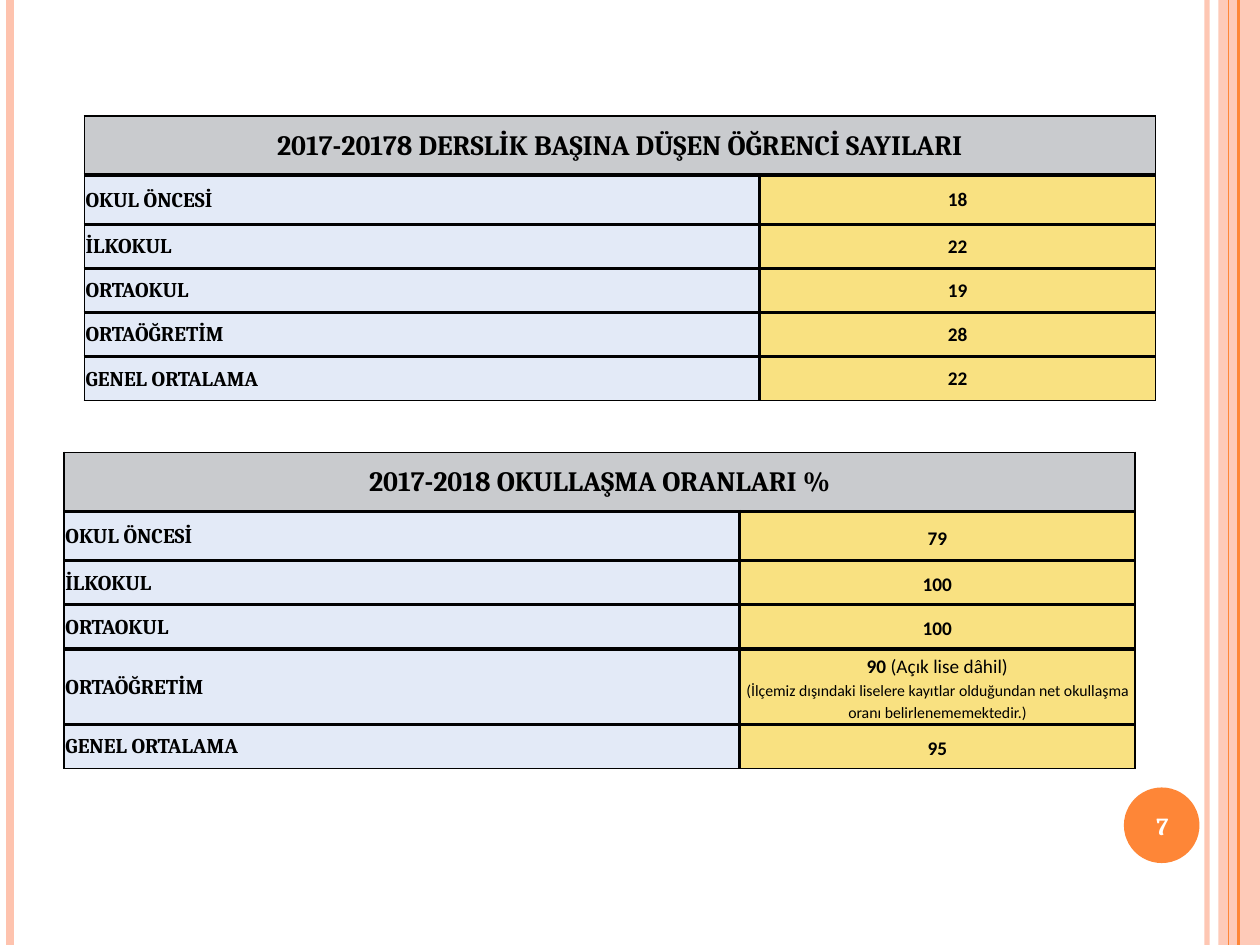
from lxml import etree
from pptx import Presentation
from pptx.dml.color import RGBColor
from pptx.enum.shapes import MSO_CONNECTOR, MSO_SHAPE
from pptx.enum.text import MSO_ANCHOR as ANCHOR, PP_ALIGN as ALIGN
from pptx.oxml.ns import qn
from pptx.util import Inches, Pt

COLORS = {"peach": "FEC3AE", "orange": "FE8637", "white": "FFFFFF", "black": "000000",
          "header": "C9CBCE", "label": "E3EAF7", "value": "F9E181"}


def add_text(p, text, size, font, bold=True, color="black"):
    r = p.add_run()
    r.text = text
    for name, value in {"size": Pt(size), "name": font, "bold": bold}.items():
        setattr(r.font, name, value)
    r.font.color.rgb = RGBColor.from_string(COLORS[color])


def format_cell(cell, color, paragraphs, align, spacing, borders):
    margins = {"margin_left": Inches(0.01), "margin_right": Inches(0.01),
               "margin_top": Inches(0.01), "margin_bottom": 0}
    for name, value in {**margins, "vertical_anchor": ANCHOR.MIDDLE}.items():
        setattr(cell, name, value)
    cell.fill.solid()
    cell.fill.fore_color.rgb = RGBColor.from_string(COLORS[color])
    for i, (side, width) in enumerate(zip("LRTB", borders)):
        ln = etree.Element(qn(f"a:ln{side}"), w=str(Pt(width)))
        fill = etree.SubElement(ln, qn("a:solidFill"))
        etree.SubElement(fill, qn("a:srgbClr"), val=COLORS["black"])
        cell._tc.get_or_add_tcPr().insert(i, ln)
    tf = cell.text_frame
    for i, runs in enumerate(paragraphs):
        p = tf.add_paragraph() if i else tf.paragraphs[0]
        p.alignment = align
        p.line_spacing = spacing
        for run in runs:
            add_text(p, *run)


prs = Presentation()
prs.slide_width, prs.slide_height = Inches(10), Inches(7.5)
s = prs.slides.add_slide(prs.slide_layouts[6])

rules = [(9.58, "peach", 3, 93), (0.08, "peach", 4.5, 100),
         (9.83, "orange", 1.5, 100), (9.75, "orange", 0.75, 100)]
bars = [(MSO_SHAPE.RECTANGLE, (9.67, 0, 0.33, 7.5), "peach", 87),
        (MSO_SHAPE.OVAL, (8.92, 6.25, 0.6, 0.6), "orange", 100)]

for kind, box, color, alpha in bars:
    sp = s.shapes.add_shape(kind, *map(Inches, box))
    sp.shadow.inherit = False
    sp.fill.solid()
    sp.fill.fore_color.rgb = RGBColor.from_string(COLORS[color])
    sp.line.fill.background()
    clr = sp._element.spPr.find(f".//{qn('a:srgbClr')}")
    etree.SubElement(clr, qn("a:alpha"), val=str(alpha * 1000))

for x, color, width, alpha in rules:
    line = s.shapes.add_connector(MSO_CONNECTOR.STRAIGHT, Inches(x), 0, Inches(x), Inches(7.5))
    line.line.color.rgb = RGBColor.from_string(COLORS[color])
    line.line.width = Pt(width)
    clr = line._element.spPr.find(f".//{qn('a:srgbClr')}")
    etree.SubElement(clr, qn("a:alpha"), val=str(alpha * 1000))
    etree.SubElement(line._element.spPr, qn("a:effectLst"))

number = s.shapes.add_textbox(*map(Inches, (8.89, 6.27, 0.67, 0.57)))
tf = number.text_frame
tf.word_wrap = True
tf.vertical_anchor = ANCHOR.MIDDLE
tf.paragraphs[0].alignment = ALIGN.CENTER
add_text(tf.paragraphs[0], "7", 14, "Cambria", True, "white")

labels = ["OKUL ÖNCESİ", "İLKOKUL", "ORTAOKUL", "ORTAÖĞRETİM", "GENEL ORTALAMA"]
secondary_note = "(İlçemiz dışındaki liselere kayıtlar olduğundan net okullaşma oranı belirlenememektedir.)"
tables = [
    {"title": "2017-20178 DERSLİK BAŞINA DÜŞEN ÖĞRENCİ SAYILARI", "at": (0.67, 0.92, 8.5, 2.27),
     "rows": [0.47, 0.39, 0.35, 0.35, 0.35, 0.35], "spacing": 1.0,
     "values": ["18", "22", "19", "28", "22"], "extra": {}},
    {"title": "2017-2018 OKULLAŞMA ORANLARI %", "at": (0.51, 3.59, 8.5, 2.53),
     "rows": [0.47, 0.39, 0.35, 0.35, 0.6, 0.35], "spacing": 1.15,
     "values": ["79", "100", "100", "90", "95"],
     "extra": {"ORTAÖĞRETİM": [[("90 ", 11, "Calibri"), ("(Açık lise dâhil)", 11, "Calibri", False)],
                               [(secondary_note, 9, "Calibri", False)]]}},
]

for data in tables:
    table = s.shapes.add_table(6, 2, *map(Inches, data["at"])).table
    table.first_row = table.horz_banding = False
    for col, width in zip(table.columns, (5.36, 3.14)):
        col.width = Inches(width)
    for row, height in zip(table.rows, data["rows"]):
        row.height = Inches(height)
    table.cell(0, 0).merge(table.cell(0, 1))
    for col, title in enumerate([[[(data["title"], 16, "Cambria")]], []]):
        format_cell(table.cell(0, col), "header", title, ALIGN.CENTER, 1.0, (1, 1, 1, 2.25))
    for i, (label, value) in enumerate(zip(labels, data["values"]), 1):
        bottom = 0.5 if i == len(labels) else 2.25
        format_cell(table.cell(i, 0), "label", [[(label, 12, "Cambria")]],
                    ALIGN.LEFT, 1.0, (1, 2.25, 2.25, bottom))
        content = data["extra"].get(label, [[(value, 11, "Calibri")]])
        format_cell(table.cell(i, 1), "value", content,
                    ALIGN.CENTER, data["spacing"], (2.25, 1, 2.25, bottom))

prs.save("out.pptx")
